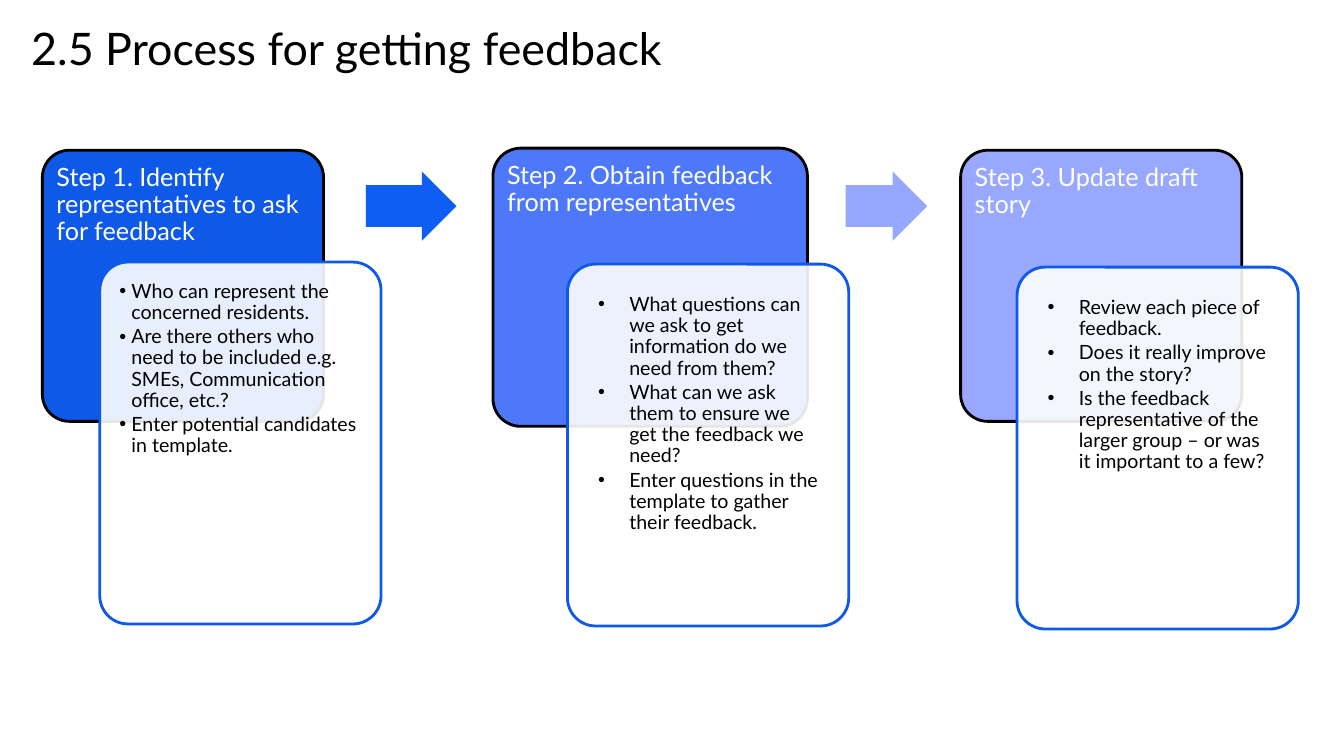
from dataclasses import dataclass

from lxml.etree import SubElement
from pptx import Presentation
from pptx.dml.color import RGBColor
from pptx.enum.shapes import MSO_SHAPE
from pptx.enum.text import MSO_ANCHOR, PP_ALIGN
from pptx.oxml.ns import qn
from pptx.util import Pt


@dataclass(frozen=True)
class Theme:
    font: str = "Lato"
    ink: str = "000000"
    paper: str = "FFFFFF"
    edge: str = "0E59E7"
    title: int = 32
    head: int = 18
    body: int = 14
    line: int = 2
    round: float = 0.1
    clear: int = 90


THEME = Theme()

STEPS = [
    dict(
        box=(30.24, 107.28, 200.88, 193.68),
        fill="0E59E7",
        head="Step 1. Identify representatives to ask for feedback",
        card=(71.28, 187.2),
        pad=7.92,
        hang=8.64,
        items=[
            "Who can represent the concerned residents.",
            "Are there others who need to be included e.g. SMEs, Communication office, etc.?",
            "Enter potential candidates in template.",
        ],
    ),
    dict(
        box=(352.08, 105.84, 224.64, 198.72),
        fill="4C78F9",
        head="Step 2. Obtain feedback from representatives",
        card=(405.36, 188.64),
        pad=15.84,
        hang=22.32,
        items=[
            "What questions can we ask to get information do we need from them?",
            "What can we ask them to ensure we get the feedback we need?",
            "Enter questions in the template to gather their feedback.",
        ],
    ),
    dict(
        box=(686.16, 107.28, 200.88, 193.68),
        fill="98A8FE",
        head="Step 3. Update draft story",
        card=(726.48, 190.8),
        pad=15.84,
        hang=22.32,
        items=[
            "Review each piece of feedback.",
            "Does it really improve on the story?",
            "Is the feedback representative of the larger group – or was it important to a few?",
        ],
    ),
]

ARROWS = [
    ((261.36, 122.4, 64.8, 49.68), "0E5EF3"),
    ((604.08, 122.4, 58.32, 49.68), "96A7FE"),
]

CARD = (200.88, 258.48)
INSET = 5.98


def points(box):
    return [Pt(side) for side in box]


def bullet(para, hang):
    props = para._p.get_or_add_pPr()
    props.set("marL", str(Pt(hang)))
    props.set("indent", str(-Pt(hang)))
    SubElement(props, qn("a:buFont")).set("typeface", "Arial")
    SubElement(props, qn("a:buChar")).set("char", "•")


def write(slide, box, lines, size, color, pad=(0, 0, 0, 0), space=None, after=0, hang=0):
    frame = slide.shapes.add_textbox(*points(box)).text_frame
    frame.word_wrap = True
    frame.vertical_anchor = MSO_ANCHOR.TOP
    frame.margin_left, frame.margin_top, frame.margin_right, frame.margin_bottom = points(pad)
    for index, line in enumerate(lines):
        para = frame.add_paragraph() if index else frame.paragraphs[0]
        if hang:
            para.level = 1
            bullet(para, hang)
        para.alignment = PP_ALIGN.LEFT
        para.line_spacing = space
        para.space_after = Pt(after)
        run = para.add_run()
        run.text = line
        run.font.name = THEME.font
        run.font.size = Pt(size)
        run.font.color.rgb = RGBColor.from_string(color)


def block(slide, kind, box, fill, edge=None, adjust=(), clear=None):
    shape = slide.shapes.add_shape(kind, *points(box))
    shape.shadow.inherit = False
    for index, value in enumerate(adjust):
        shape.adjustments[index] = value
    shape.fill.solid()
    shape.fill.fore_color.rgb = RGBColor.from_string(fill)
    if clear:
        color = shape._element.spPr.find(qn("a:solidFill"))[0]
        SubElement(color, qn("a:alpha")).set("val", str(clear * 1000))
    if edge:
        shape.line.color.rgb = RGBColor.from_string(edge)
        shape.line.width = Pt(THEME.line)
    else:
        shape.line.fill.background()


def draw_step(slide, box, fill, head, card, pad, hang, items):
    left, top, width, height = box
    block(slide, MSO_SHAPE.ROUNDED_RECTANGLE, box, fill, THEME.ink, [THEME.round])
    write(slide, (left, top, width, height * 0.41), [head], THEME.head, THEME.paper,
          pad=(10.08, 10.08, 10.08, 5.04), space=0.9, after=6.3)
    draw_card(slide, (*card, *CARD), pad, hang, items)


def draw_card(slide, box, pad, hang, items):
    left, top, width, height = box
    block(slide, MSO_SHAPE.ROUNDED_RECTANGLE, box, THEME.paper, THEME.edge,
          [THEME.round], THEME.clear)
    inner = (left + INSET, top + INSET, width - 2 * INSET, height - 2 * INSET)
    write(slide, inner, items, THEME.body, THEME.ink, pad=[pad] * 4,
          space=0.9, after=2.1, hang=hang)


def draw_title(slide, box):
    write(slide, box, ["2.5 Process for getting feedback"], THEME.title, THEME.ink)


def draw_arrow(slide, box, fill):
    block(slide, MSO_SHAPE.RIGHT_ARROW, box, fill, adjust=(0.6, 0.5))


def main():
    deck = Presentation()
    deck.slide_width, deck.slide_height = Pt(960), Pt(540)
    slide = deck.slides.add_slide(deck.slide_layouts[6])
    draw_title(slide, (22.32, 15.12, 649.44, 59.76))
    for step in STEPS:
        draw_step(slide, **step)
    for box, fill in ARROWS:
        draw_arrow(slide, box, fill)
    deck.save("out.pptx")


if __name__ == "__main__":
    main()
